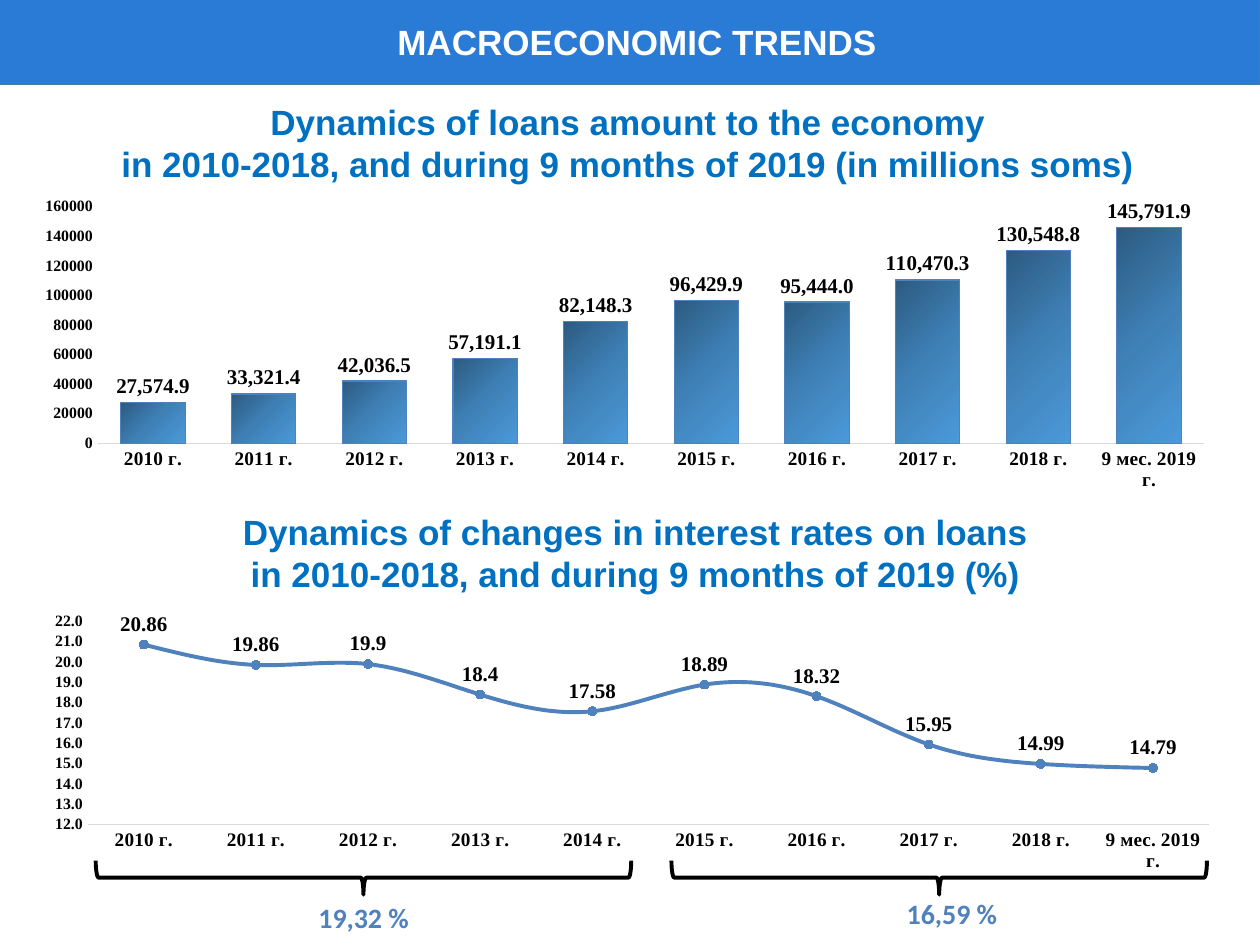
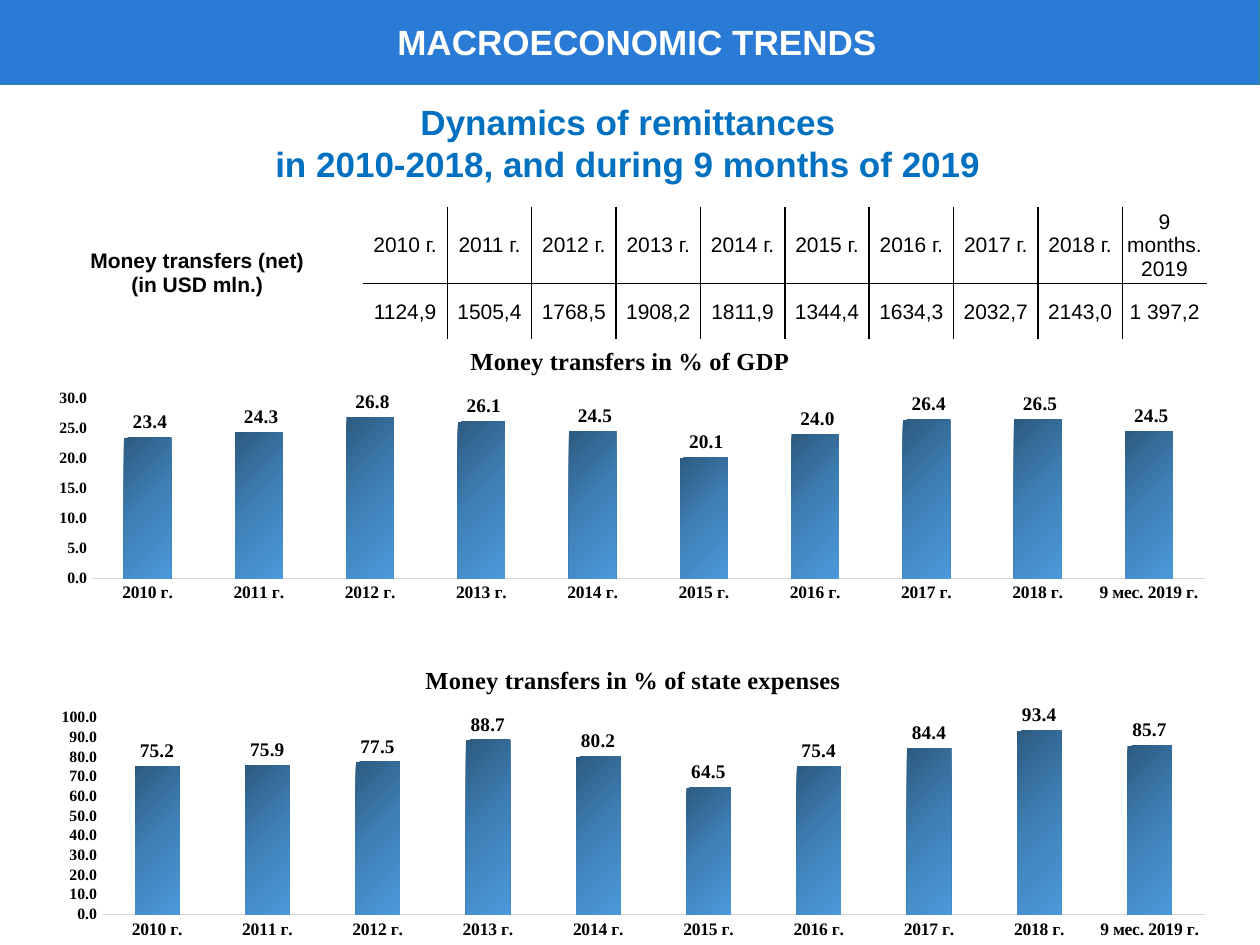
"""Build two slides on macroeconomic trends: loans and interest rates, then remittances."""
import pptx
import pptx.chart.data
import pptx.dml.color
import pptx.enum.chart
import pptx.enum.shapes
import pptx.enum.text
import pptx.oxml
import pptx.oxml.ns
import pptx.util
from pptx.util import Pt

COLOURS = {
    "band": "2A7BD5", "band_edge": "3B8594", "heading": "0070C0", "accent": "4F81BD",
    "axis": "D9D9D9", "ink": "000000", "paper": "FFFFFF",
}
BAR_GRADIENT = [(0, "2C5B81"), (50, "3F81B7"), (100, "4B99D9")]
RGB = {name: pptx.dml.color.RGBColor.from_string(value) for name, value in COLOURS.items()}
CENTRE = pptx.enum.text.PP_ALIGN.CENTER
CHART_TYPES = pptx.enum.chart.XL_CHART_TYPE
TICK_NONE = pptx.enum.chart.XL_TICK_MARK.NONE
DRAWING_NS = pptx.oxml.ns.nsdecls("a")
YEARS = [f"{year} г." for year in range(2010, 2019)]

HEADING = {"name": "Arial", "size": 20, "colour": "heading"}
BANNER = {**HEADING, "colour": "paper"}
AVERAGE = {"name": "Calibri", "size": 16, "colour": "accent"}


def style_font(font, name="Times New Roman", size=12, colour="ink", bold=True):
    """Give a font its face, size, weight and colour."""
    for attribute, value in {"name": name, "size": Pt(size), "bold": bold}.items():
        setattr(font, attribute, value)
    font.color.rgb = RGB[colour]


def write_lines(frame, lines, **style):
    """Fill a text frame with centred lines in one style."""
    for index, line in enumerate(lines):
        paragraph = frame.add_paragraph() if index else frame.paragraphs[0]
        paragraph.alignment = CENTRE
        run = paragraph.add_run()
        run.text = line
        style_font(run.font, **style)


LOANS = {
    "box": (12.2, 109.4, 689.8, 174.2), "type": CHART_TYPES.COLUMN_CLUSTERED,
    "values": [27574.9, 33321.4, 42036.5, 57191.1, 82148.3, 96429.9, 95444, 110470.3, 130548.8, 145791.9],
    "gap": 72, "year_size": 11, "label_size": 12, "label_format": "#,##0.0", "axis_format": "General",
    "outlined": True,
}
RATES = {
    "box": (12.2, 349.9, 689.8, 154.8), "type": CHART_TYPES.LINE_MARKERS,
    "values": [20.86, 19.86, 19.9, 18.4, 17.58, 18.89, 18.32, 15.95, 14.99, 14.79],
    "year_size": 11, "label_size": 12, "label_format": "General", "axis_format": "#,##0.0",
    "plot": {"x": 0.055, "y": 0.027, "w": 0.929, "h": 0.756},
}
GDP_SHARE = {
    "box": (18, 187.9, 684, 159.8), "type": CHART_TYPES.COLUMN_CLUSTERED,
    "title": "Money transfers in % of GDP",
    "values": [23.4, 24.3, 26.8, 26.1, 24.5, 20.1, 24, 26.4, 26.5, 24.5],
    "gap": 135, "year_size": 10, "label_size": 11, "label_format": r"#\ ##0.0", "axis_format": r"#\ ##0.0",
}
EXPENSES_SHARE = {
    "box": (21.6, 370.1, 680.4, 169.9), "type": CHART_TYPES.COLUMN_CLUSTERED,
    "title": "Money transfers in % of state expenses",
    "values": [75.2, 75.9, 77.5, 88.7, 80.2, 64.5, 75.4, 84.4, 93.4, 85.7],
    "gap": 149, "year_size": 10, "label_size": 11, "label_format": "0.0", "axis_format": "0.0",
}
PAGES = [
    {
        "texts": [
            ((18, 54, 681.8, 55.4), HEADING,
             ["Dynamics of loans amount to the economy",
              "in 2010-2018, and during 9 months of 2019 (in millions soms)"]),
            ((22.3, 288, 681.8, 55.4), HEADING,
             ["Dynamics of changes in interest rates on loans",
              "in 2010-2018, and during 9 months of 2019 (%)"]),
            ((131.8, 511.2, 151.9, 26.6), AVERAGE, ["19,32 %"]),
            ((468, 509, 151.9, 26.6), AVERAGE, ["16,59 %"]),
        ],
        "charts": [LOANS, RATES],
    },
    {
        "texts": [
            ((18, 54, 681.8, 55.4), HEADING,
             ["Dynamics of remittances", "in 2010-2018, and during 9 months of 2019"]),
        ],
        "charts": [GDP_SHARE, EXPENSES_SHARE],
    },
]

deck = pptx.Presentation()
deck.slide_width, deck.slide_height = Pt(720), Pt(540)

for page in PAGES:
    slide = deck.slides.add_slide(deck.slide_layouts[6])
    band = slide.shapes.add_shape(
        pptx.enum.shapes.MSO_SHAPE.RECTANGLE, Pt(-0.7), Pt(-0.7), Pt(720.7), Pt(49))
    band.shadow.inherit = False
    band.fill.solid()
    band.fill.fore_color.rgb = RGB["band"]
    band.line.color.rgb = RGB["band_edge"]
    band.line.width = Pt(1)

    banner = ((60.5, 7.9, 607, 31.7), BANNER, ["MACROECONOMIC TRENDS"])
    for box, style, lines in [banner, *page["texts"]]:
        frame = slide.shapes.add_textbox(*map(Pt, box)).text_frame
        frame.word_wrap = True
        frame.auto_size = pptx.enum.text.MSO_AUTO_SIZE.SHAPE_TO_FIT_TEXT
        write_lines(frame, lines, **style)

    for trend in page["charts"]:
        trend_data = pptx.chart.data.CategoryChartData()
        trend_data.categories = YEARS + ["9 мес. 2019 г."]
        trend_data.add_series("Series 1", trend["values"])
        chart = slide.shapes.add_chart(trend["type"], *map(Pt, trend["box"]), trend_data).chart
        style_font(chart.font, size=10)
        chart.has_legend = False
        chart.has_title = "title" in trend
        if chart.has_title:
            write_lines(chart.chart_title.text_frame, [trend["title"]], size=14)

        years, scale = chart.category_axis, chart.value_axis
        for axis, size in [(years, trend["year_size"]), (scale, 9)]:
            axis.major_tick_mark = axis.minor_tick_mark = TICK_NONE
            axis.has_major_gridlines = False
            style_font(axis.tick_labels.font, size=size)
        years.format.line.color.rgb = RGB["axis"]
        years.format.line.width = Pt(0.75)
        scale.format.line.fill.background()
        scale.tick_labels.number_format = trend["axis_format"]
        scale.tick_labels.number_format_is_linked = False

        plot = chart.plots[0]
        plot.vary_by_categories = False
        plot.has_data_labels = True
        labels = plot.data_labels
        labels.show_value = True
        labels.number_format = trend["label_format"]
        labels.number_format_is_linked = False
        style_font(labels.font, size=trend["label_size"])

        series = plot.series[0]
        if trend["type"] == CHART_TYPES.LINE_MARKERS:
            labels.position = pptx.enum.chart.XL_LABEL_POSITION.ABOVE
            scale.minimum_scale, scale.maximum_scale, scale.major_unit = 12, 22, 1
            series.smooth = True
            series.format.line.color.rgb = RGB["accent"]
            series.format.line.width = Pt(2.25)
            series.marker.style = pptx.enum.chart.XL_MARKER_STYLE.CIRCLE
            series.marker.size = 5
            series.marker.format.fill.solid()
            series.marker.format.fill.fore_color.rgb = RGB["accent"]
            series.marker.format.line.color.rgb = RGB["accent"]
            modes = '<c:layoutTarget val="inner"/><c:xMode val="edge"/><c:yMode val="edge"/>'
            sides = "".join(f'<c:{side} val="{part}"/>' for side, part in trend["plot"].items())
            plot_area = chart._chartSpace.chart.plotArea
            for layout in plot_area.findall(pptx.oxml.ns.qn("c:layout")):
                plot_area.remove(layout)
            plot_area.insert(0, pptx.oxml.parse_xml(
                f'<c:layout {pptx.oxml.ns.nsdecls("c")}><c:manualLayout>{modes}{sides}'
                '</c:manualLayout></c:layout>'))
        else:
            labels.position = pptx.enum.chart.XL_LABEL_POSITION.OUTSIDE_END
            plot.gap_width, plot.overlap = trend["gap"], -27
            series.format.fill.gradient()
            series.format.fill.gradient_angle = 315
            stops = next(series._element.iter(pptx.oxml.ns.qn("a:gsLst")))
            for stop in list(stops):
                stops.remove(stop)
            for percent, colour in BAR_GRADIENT:
                stops.append(pptx.oxml.parse_xml(
                    f'<a:gs {DRAWING_NS} pos="{percent * 1000}"><a:srgbClr val="{colour}"/></a:gs>'))
            if trend.get("outlined"):
                series.format.line.color.rgb = RGB["accent"]
                series.format.line.width = Pt(0.75)

loans_slide, remittances_slide = deck.slides

for left in (198, 527):
    period_brace = loans_slide.shapes.add_shape(
        pptx.enum.shapes.MSO_SHAPE.LEFT_BRACE, Pt(left), Pt(348.5), Pt(19.4), Pt(306))
    period_brace.rotation = 270
    period_brace.shadow.inherit = False
    period_brace.fill.background()
    period_brace.line.color.rgb = RGB["ink"]
    period_brace.line.width = Pt(2.25)

TRANSFERS = [
    YEARS + ["9 months. 2019"],
    ["1124,9", "1505,4", "1768,5", "1908,2", "1811,9", "1344,4", "1634,3", "2032,7", "2143,0", "1 397,2"],
]
transfers = remittances_slide.shapes.add_table(2, 11, Pt(18), Pt(118), Pt(672), Pt(75.6)).table
transfers.first_row = transfers.horz_banding = False
for column_index, column in enumerate(transfers.columns):
    column.width = Pt(48.24 if column_index else 189.4)
for row, height in zip(transfers.rows, (44, 31.6)):
    row.height = Pt(height)
transfers.cell(0, 0).merge(transfers.cell(1, 0))

for row_index, row in enumerate(transfers.rows):
    for column_index, cell in enumerate(row.cells):
        cell.fill.background()
        cell.vertical_anchor = pptx.enum.text.MSO_ANCHOR.MIDDLE
        for margin, points in {"left": 0.7, "right": 0.7, "top": 0.7, "bottom": 0}.items():
            setattr(cell, f"margin_{margin}", Pt(points))
        if column_index:
            write_lines(cell.text_frame, [TRANSFERS[row_index][column_index - 1]],
                        name="Arial", bold=False)
        elif row_index == 0:
            write_lines(cell.text_frame, ["Money transfers (net)", "(in USD mln.)"], name="Arial")
        ruled = {
            "L": column_index > 1,
            "R": 0 < column_index < 10,
            "T": column_index > 0 and row_index == 1,
            "B": column_index > 0 and row_index == 0,
        }
        cell_properties = cell._tc.get_or_add_tcPr()
        for position, (side, drawn) in enumerate(ruled.items()):
            ink = f'<a:solidFill><a:srgbClr val="{COLOURS["ink"]}"/></a:solidFill>'
            cell_properties.insert(position, pptx.oxml.parse_xml(
                f'<a:ln{side} {DRAWING_NS} w="12700">{ink if drawn else "<a:noFill/>"}</a:ln{side}>'))

deck.save("out.pptx")
